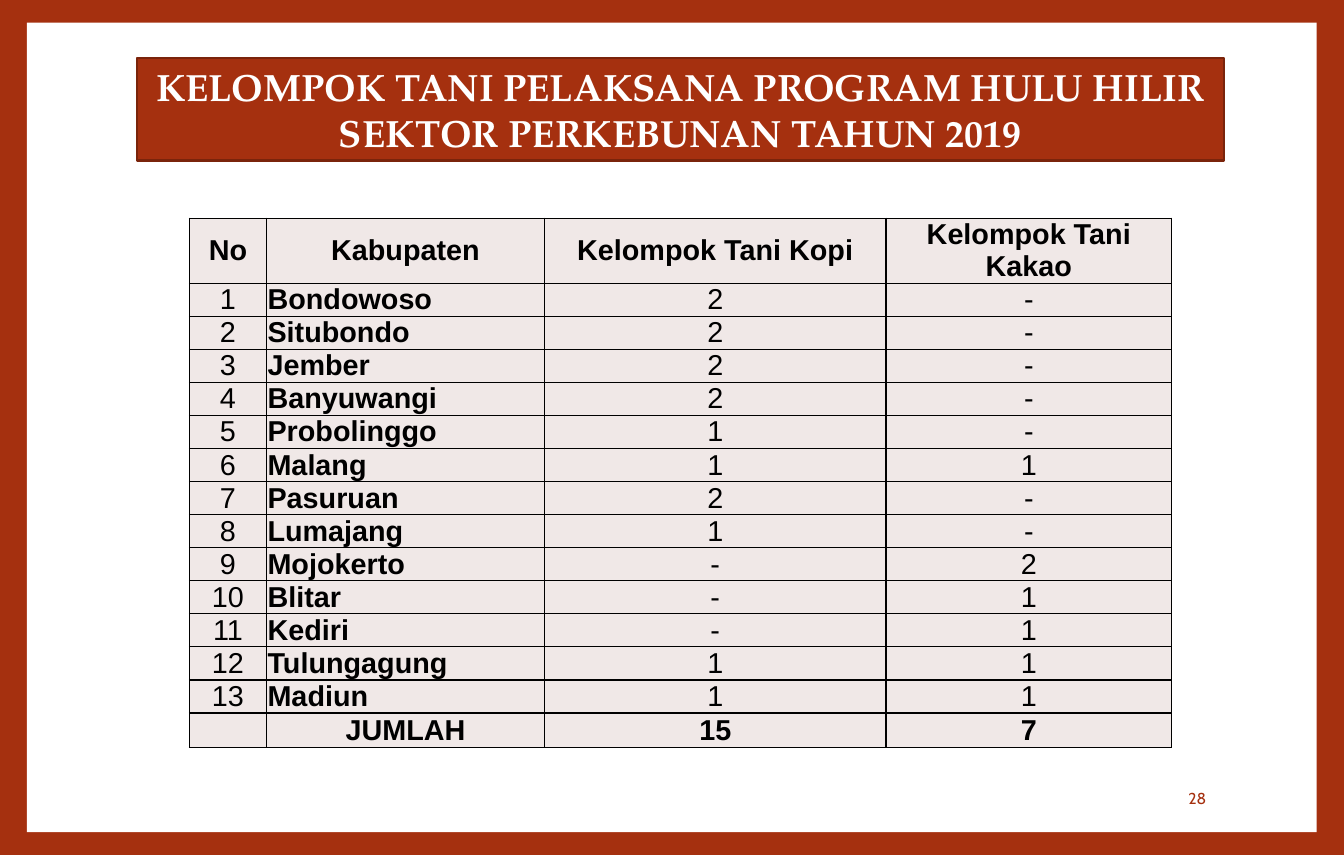
import pptx
import pptx.dml.color
import pptx.enum.shapes
import pptx.enum.text
import pptx.oxml
import pptx.oxml.ns
import pptx.util

Pt = pptx.util.Pt
ALIGN = pptx.enum.text.PP_ALIGN
MIDDLE = pptx.enum.text.MSO_ANCHOR.MIDDLE

COLORS = {
    "rust": "A5300F",
    "dark_rust": "7A240B",
    "white": "FFFFFF",
    "black": "000000",
    "cell": "F0E8E7",
}

HEADINGS = ["No", "Kabupaten", "Kelompok Tani Kopi", "Kelompok Tani Kakao"]
GROUPS = [
    ("Bondowoso", "2", "-"),
    ("Situbondo", "2", "-"),
    ("Jember", "2", "-"),
    ("Banyuwangi", "2", "-"),
    ("Probolinggo", "1", "-"),
    ("Malang", "1", "1"),
    ("Pasuruan", "2", "-"),
    ("Lumajang", "1", "-"),
    ("Mojokerto", "-", "2"),
    ("Blitar", "-", "1"),
    ("Kediri", "-", "1"),
    ("Tulungagung", "1", "1"),
    ("Madiun", "1", "1"),
]
TOTALS = ["", "JUMLAH", "15", "7"]
COLUMN_WIDTHS = [53.7, 193.5, 237.7, 198.8]
HEADING_HEIGHT, ROW_HEIGHT = 45.2, 23.04


def rgb(name):
    return pptx.dml.color.RGBColor.from_string(COLORS[name])


def style_paragraph(paragraph, font, size, color, align, bold=False):
    paragraph.alignment = align
    paragraph.font.name = font
    paragraph.font.size = Pt(size)
    paragraph.font.bold = bold
    paragraph.font.color.rgb = rgb(color)


def add_panel(slide, left, top, width, height, fill, line=None):
    panel = slide.shapes.add_shape(
        pptx.enum.shapes.MSO_SHAPE.RECTANGLE,
        Pt(left), Pt(top), Pt(width), Pt(height))
    panel.shadow.inherit = False
    panel.fill.solid()
    panel.fill.fore_color.rgb = rgb(fill)
    if line:
        panel.line.color.rgb = rgb(line)
        panel.line.width = Pt(1.5)
    else:
        panel.line.fill.background()
    return panel


def add_title(slide, lines):
    banner = add_panel(slide, 95.5, 40.3, 756.3, 71.5, "rust", "dark_rust")
    frame = banner.text_frame
    frame.word_wrap = True
    frame.vertical_anchor = MIDDLE
    frame.text = "\n".join(lines)
    for paragraph in frame.paragraphs:
        style_paragraph(paragraph, "TeX Gyre Pagella", 26.4, "white",
                        ALIGN.CENTER, bold=True)


def add_page_number(slide, number):
    frame = slide.shapes.add_textbox(
        Pt(715.7), Pt(539.7), Pt(131), Pt(31.7)).text_frame
    frame.word_wrap = True
    frame.vertical_anchor = MIDDLE
    frame.text = number
    style_paragraph(frame.paragraphs[0], "Cabin", 11, "rust", ALIGN.RIGHT)


def add_borders(cell):
    """Draw a 1 pt black line on all four sides of the cell."""
    properties = cell._tc.get_or_add_tcPr()
    for position, side in enumerate(("lnL", "lnR", "lnT", "lnB")):
        properties.insert(position, pptx.oxml.parse_xml(
            f'<a:{side} {pptx.oxml.ns.nsdecls("a")} w="{Pt(1)}"><a:solidFill>'
            f'<a:srgbClr val="{COLORS["black"]}"/></a:solidFill></a:{side}>'))


def fill_cell(cell, text, align, bold):
    cell.fill.solid()
    cell.fill.fore_color.rgb = rgb("cell")
    cell.vertical_anchor = MIDDLE
    cell.margin_left = cell.margin_right = Pt(0.72)
    cell.margin_top = cell.margin_bottom = 0
    cell.text = text
    paragraph = cell.text_frame.paragraphs[0]
    style_paragraph(paragraph, "Arial", 20, "black", align, bold)
    paragraph.line_spacing = Pt(22.3)
    add_borders(cell)


def add_group_table(slide):
    numbered = [[str(number), *group] for number, group in enumerate(GROUPS, 1)]
    rows = [HEADINGS, *numbered, TOTALS]
    heights = [HEADING_HEIGHT] + [ROW_HEIGHT] * (len(rows) - 1)
    table = slide.shapes.add_table(
        len(rows), len(HEADINGS), Pt(131.8), Pt(152),
        Pt(sum(COLUMN_WIDTHS)), Pt(sum(heights))).table
    for column, width in zip(table.columns, COLUMN_WIDTHS):
        column.width = Pt(width)
    for r, (values, height) in enumerate(zip(rows, heights)):
        table.rows[r].height = Pt(height)
        is_group = 0 < r < len(rows) - 1
        for c, value in enumerate(values):
            is_district = is_group and c == 1
            fill_cell(table.cell(r, c), value,
                      ALIGN.LEFT if is_district else ALIGN.CENTER,
                      bold=is_district or not is_group)


def main():
    deck = pptx.Presentation()
    deck.slide_width, deck.slide_height = Pt(935.43), Pt(595.28)
    slide = deck.slides.add_slide(deck.slide_layouts[6])
    slide.background.fill.solid()
    slide.background.fill.fore_color.rgb = rgb("rust")
    add_panel(slide, 18.7, 15.8, 897.8, 563.6, "white")
    add_page_number(slide, "28")
    add_group_table(slide)
    add_title(slide, ["KELOMPOK TANI PELAKSANA PROGRAM HULU HILIR",
                      "SEKTOR PERKEBUNAN TAHUN 2019"])
    deck.save("out.pptx")


if __name__ == "__main__":
    main()
